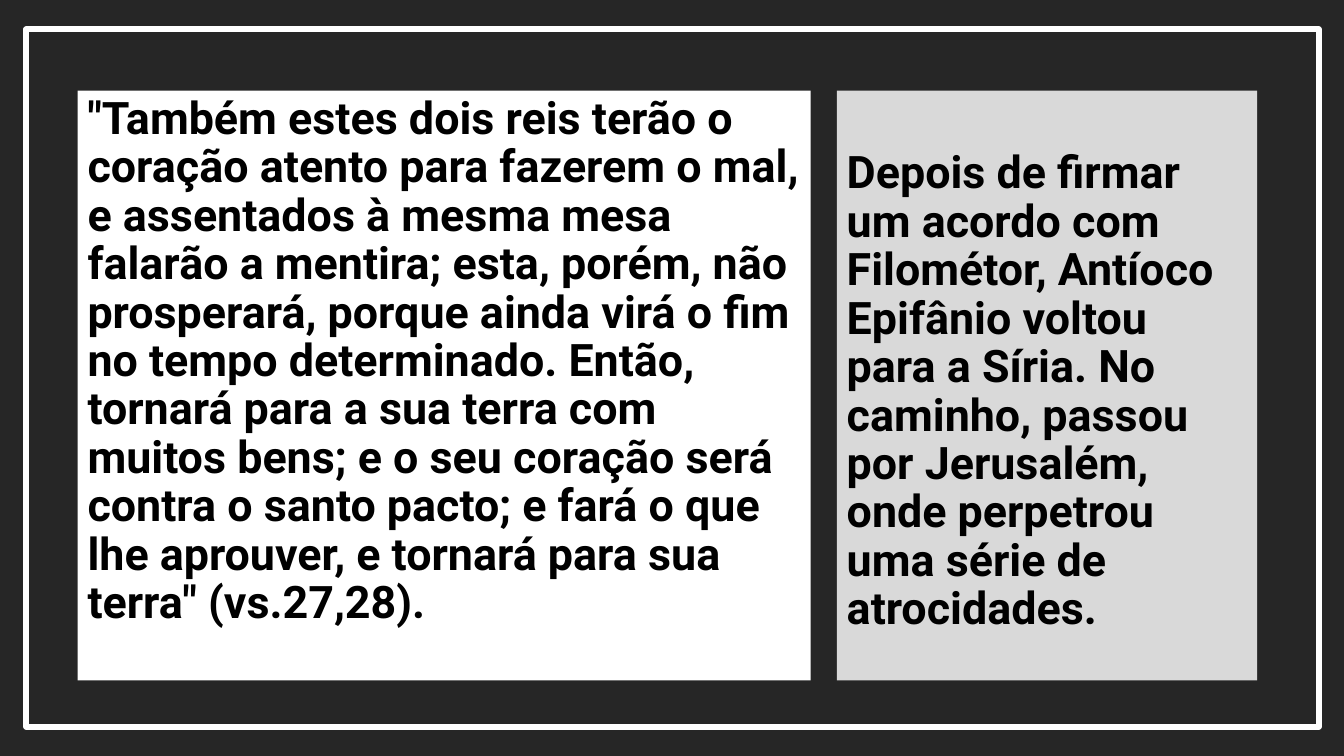
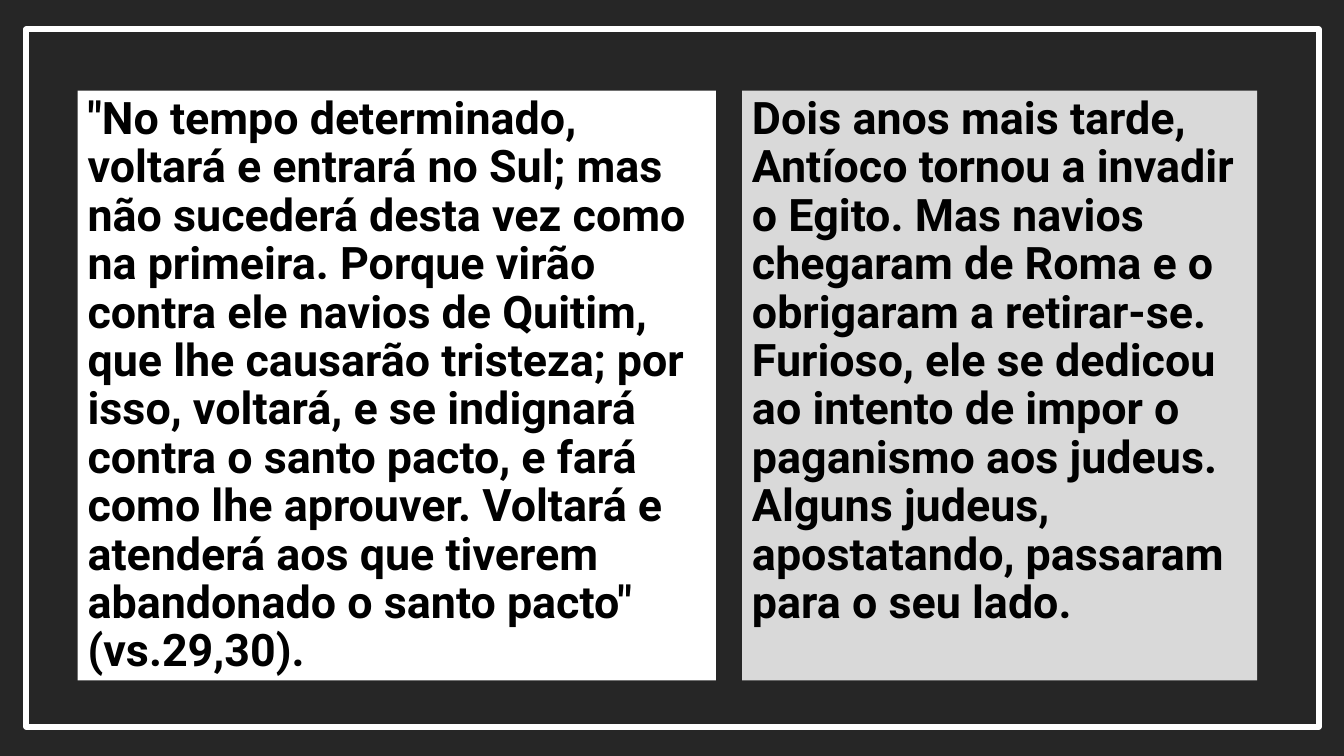
from dataclasses import dataclass

from pptx import Presentation
from pptx.dml.color import RGBColor
from pptx.enum.shapes import MSO_SHAPE
from pptx.enum.text import MSO_ANCHOR, PP_ALIGN
from pptx.util import Inches, Pt


@dataclass(frozen=True)
class Theme:
    """Colours, type and measures (in inches) shared by the slides."""

    background: RGBColor = RGBColor(0x26, 0x26, 0x26)
    frame: RGBColor = RGBColor(0xFF, 0xFF, 0xFF)
    verse_fill: RGBColor = RGBColor(0xFF, 0xFF, 0xFF)
    comment_fill: RGBColor = RGBColor(0xD9, 0xD9, 0xD9)
    text: RGBColor = RGBColor(0, 0, 0)
    font: str = "Roboto"
    text_size: int = 32
    frame_width: int = 4
    line_spacing: float = 0.9
    panel_left: float = 0.77
    panel_right: float = 12.47
    panel_top: float = 0.9
    panel_height: float = 5.85
    panel_gap: float = 0.26
    text_inset: float = 0.05


class Deck:
    """Builds slides that set a verse beside its comment."""

    def __init__(self, theme):
        """Start an empty widescreen presentation."""
        self.theme = theme
        self.presentation = Presentation()
        self.presentation.slide_width = Inches(13.33)
        self.presentation.slide_height = Inches(7.5)
        self.slide = None

    def add_slide(self):
        """Add a dark slide with its frame."""
        layout = self.presentation.slide_layouts[6]
        self.slide = self.presentation.slides.add_slide(layout)
        background = self.slide.background.fill
        background.solid()
        background.fore_color.rgb = self.theme.background
        self.add_frame()

    def add_rectangle(self, left, top, width, height):
        """Add a rectangle without a shadow."""
        shape = self.slide.shapes.add_shape(
            MSO_SHAPE.RECTANGLE, Inches(left), Inches(top), Inches(width), Inches(height)
        )
        shape.shadow.inherit = False
        return shape

    def add_frame(self):
        """Add the outline around the slide."""
        shape = self.add_rectangle(0.26, 0.29, 12.82, 6.92)
        shape.fill.background()
        shape.line.color.rgb = self.theme.frame
        shape.line.width = Pt(self.theme.frame_width)

    def add_panel(self, left, width, fill, text, drop=0):
        """Add a filled panel whose text starts lower by the given drop."""
        theme = self.theme
        shape = self.add_rectangle(left, theme.panel_top, width, theme.panel_height)
        shape.fill.solid()
        shape.fill.fore_color.rgb = fill
        shape.line.fill.background()
        frame = shape.text_frame
        frame.word_wrap = True
        frame.vertical_anchor = MSO_ANCHOR.TOP
        frame.margin_top = Inches(theme.text_inset + drop)
        frame.text = text
        paragraph = frame.paragraphs[0]
        paragraph.alignment = PP_ALIGN.LEFT
        paragraph.line_spacing = theme.line_spacing
        paragraph.font.name = theme.font
        paragraph.font.size = Pt(theme.text_size)
        paragraph.font.bold = True
        paragraph.font.color.rgb = theme.text

    def add_verse_slide(self, verse, comment, verse_width, comment_drop=0):
        """Add a slide with the verse on the left and the comment on the right."""
        theme = self.theme
        self.add_slide()
        self.add_panel(theme.panel_left, verse_width, theme.verse_fill, verse)
        comment_left = theme.panel_left + verse_width + theme.panel_gap
        comment_width = theme.panel_right - comment_left
        self.add_panel(comment_left, comment_width, theme.comment_fill, comment, comment_drop)


def main():
    """Build and save the presentation."""
    deck = Deck(Theme())
    deck.add_verse_slide(
        verse=(
            '"Também estes dois reis terão o coração atento para fazerem o mal, '
            "e assentados à mesma mesa falarão a mentira; esta, porém, não prosperará, "
            "porque ainda virá o fim no tempo determinado. Então, tornará para a sua terra "
            "com muitos bens; e o seu coração será contra o santo pacto; e fará o que lhe "
            'aprouver, e tornará para sua terra" (vs.27,28).'
        ),
        comment=(
            "Depois de firmar um acordo com Filométor, Antíoco Epifânio voltou para a Síria. "
            "No caminho, passou por Jerusalém, onde perpetrou uma série de atrocidades."
        ),
        verse_width=7.27,
        comment_drop=0.54,
    )
    deck.add_verse_slide(
        verse=(
            '"No tempo determinado, voltará e entrará no Sul; mas não sucederá desta vez '
            "como na primeira. Porque virão contra ele navios de Quitim, que lhe causarão "
            "tristeza; por isso, voltará, e se indignará contra o santo pacto, e fará como "
            "lhe aprouver. Voltará e atenderá aos que tiverem abandonado o santo pacto\" "
            "(vs.29,30)."
        ),
        comment=(
            "Dois anos mais tarde, Antíoco tornou a invadir o Egito. Mas navios chegaram de "
            "Roma e o obrigaram a retirar-se. Furioso, ele se dedicou ao intento de impor o "
            "paganismo aos judeus. Alguns judeus, apostatando, passaram para o seu lado."
        ),
        verse_width=6.33,
    )
    deck.presentation.save("out.pptx")


if __name__ == "__main__":
    main()
